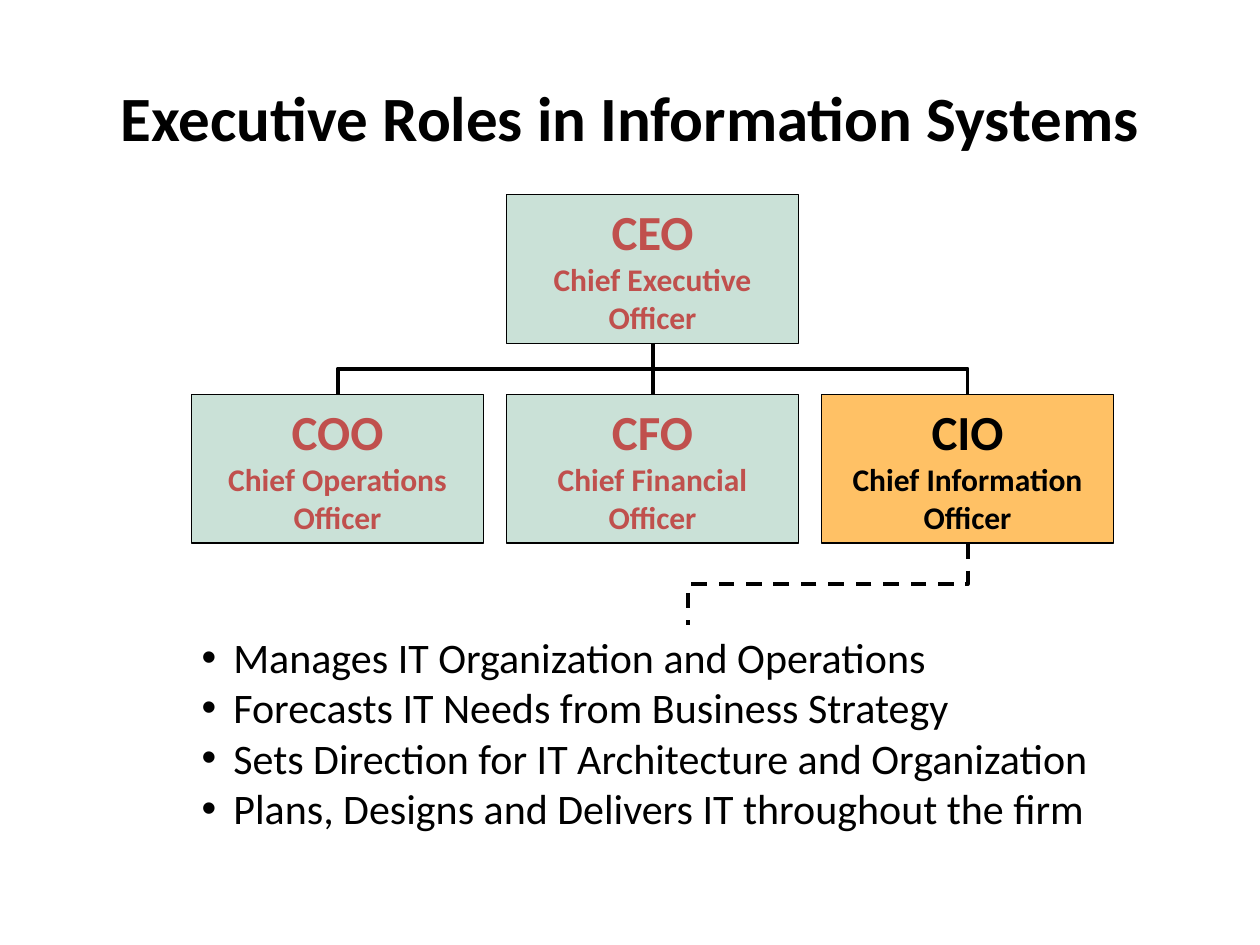
import dataclasses

import pptx
import pptx.dml.color
import pptx.enum.dml
import pptx.enum.shapes
import pptx.enum.text
import pptx.oxml
import pptx.oxml.ns
import pptx.util

Cm = pptx.util.Cm
Pt = pptx.util.Pt
RGB = pptx.dml.color.RGBColor
CONNECTOR = pptx.enum.shapes.MSO_CONNECTOR
ALIGN = pptx.enum.text.PP_ALIGN
ANCHOR = pptx.enum.text.MSO_ANCHOR
AUTO_SIZE = pptx.enum.text.MSO_AUTO_SIZE


@dataclasses.dataclass(frozen=True)
class Theme:
    font: str = "Calibri"
    black: RGB = RGB(0x00, 0x00, 0x00)
    red: RGB = RGB(0xC0, 0x50, 0x4D)
    green: RGB = RGB(0xCA, 0xE1, 0xD7)
    orange: RGB = RGB(0xFF, 0xC1, 0x65)
    title_size: Pt = Pt(36)
    role_size: Pt = Pt(28)
    list_size: Pt = Pt(24)
    name_size: Pt = Pt(18)
    border: Pt = Pt(0.75)
    connector: Pt = Pt(2.25)


THEME = Theme()

REPORTS = [
    ("COO", "Chief Operations"),
    ("CFO", "Chief Financial"),
    ("CIO", "Chief Information"),
]
DUTIES = [
    "Manages IT Organization and Operations",
    "Forecasts IT Needs from Business Strategy",
    "Sets Direction for IT Architecture and Organization",
    "Plans, Designs and Delivers IT throughout the firm",
]


def place(shape, left, top, width, height):
    shape.left, shape.top = int(left), int(top)
    shape.width, shape.height = int(width), int(height)


def add_run(paragraph, text, size, color, bold=False):
    run = paragraph.add_run()
    run.text = text
    run.font.name = THEME.font
    run.font.size = size
    run.font.bold = bold
    run.font.color.rgb = color


def write_paragraphs(text_frame, lines, color, bold, alignment):
    """Write one paragraph for each (text, size) pair."""
    for index, (text, size) in enumerate(lines):
        paragraph = text_frame.add_paragraph() if index else text_frame.paragraphs[0]
        paragraph.alignment = alignment
        paragraph.space_before = Pt(0)
        add_run(paragraph, text, size, color, bold)


def add_title(slide, left, top, width, height):
    title = slide.shapes.title
    place(title, left, top, width, height)
    title.text_frame.vertical_anchor = ANCHOR.MIDDLE
    lines = [("Executive Roles in Information Systems", THEME.title_size)]
    write_paragraphs(title.text_frame, lines, THEME.black, True, ALIGN.CENTER)


def add_role(slide, role, name, left, top, width, height, fill, color):
    box = slide.shapes.add_shape(
        pptx.enum.shapes.MSO_SHAPE.RECTANGLE, left, top, width, height
    )
    box.shadow.inherit = False
    box.fill.solid()
    box.fill.fore_color.rgb = fill
    box.line.color.rgb = THEME.black
    box.line.width = THEME.border
    box.text_frame.word_wrap = False
    box.text_frame.vertical_anchor = ANCHOR.MIDDLE
    lines = [(role, THEME.role_size), (name, THEME.name_size), ("Officer", THEME.name_size)]
    write_paragraphs(box.text_frame, lines, color, True, ALIGN.CENTER)
    return box


def connect_down(slide, upper, lower, dashed=False):
    """Join the bottom of one shape to the top of another, with a bend if they are offset."""
    start_x, start_y = upper.left + upper.width // 2, upper.top + upper.height
    end_x, end_y = lower.left + lower.width // 2, lower.top
    across, down = end_x - start_x, end_y - start_y
    kind = CONNECTOR.ELBOW if across else CONNECTOR.STRAIGHT
    connector = slide.shapes.add_connector(kind, start_x, start_y, end_x, end_y)
    connector.begin_connect(upper, 2)
    connector.end_connect(lower, 0)
    properties = connector._element.spPr
    if across:
        # A quarter turn makes the elbow leave and arrive vertically
        frame = properties.find(pptx.oxml.ns.qn("a:xfrm"))
        frame.attrib.clear()
        frame.set("rot", "5400000" if across < 0 else "16200000")
        if across > 0:
            frame.set("flipH", "1")
        place(
            connector,
            (start_x + end_x - down) / 2,
            (start_y + end_y - abs(across)) / 2,
            down,
            abs(across),
        )
    connector.line.color.rgb = THEME.black
    connector.line.width = THEME.connector
    if dashed:
        connector.line.dash_style = pptx.enum.dml.MSO_LINE.DASH
    properties.append(pptx.oxml.parse_xml(f"<a:effectLst {pptx.oxml.ns.nsdecls('a')}/>"))


def add_organization_chart(slide, left, top, width, height):
    """Draw the chief executive above three reports and return the last report's box."""
    box_width, box_height = Cm(5.89), Cm(3)
    step = (width - box_width) // (len(REPORTS) - 1)
    chief = add_role(
        slide, "CEO", "Chief Executive", left + step, top,
        box_width, box_height, THEME.green, THEME.red,
    )
    report_top = top + height - box_height
    boxes = []
    for index, (role, name) in enumerate(REPORTS):
        highlighted = role == "CIO"
        fill = THEME.orange if highlighted else THEME.green
        color = THEME.black if highlighted else THEME.red
        boxes.append(add_role(
            slide, role, name, left + index * step, report_top,
            box_width, box_height, fill, color,
        ))
    for box in boxes:
        connect_down(slide, chief, box)
    return boxes[-1]


def add_duties(slide, left, top, width, height):
    body = slide.placeholders[1]
    place(body, left, top, width, height)
    body.text_frame.word_wrap = True
    body.text_frame.auto_size = AUTO_SIZE.SHAPE_TO_FIT_TEXT
    lines = [(duty, THEME.list_size) for duty in DUTIES]
    write_paragraphs(body.text_frame, lines, THEME.black, False, ALIGN.LEFT)
    # Bullets with a hanging indent
    for paragraph in body.text_frame.paragraphs:
        properties = paragraph._p.get_or_add_pPr()
        properties.set("marL", str(Cm(0.64)))
        properties.set("indent", str(-Cm(0.64)))
        namespace = pptx.oxml.ns.nsdecls("a")
        properties.append(pptx.oxml.parse_xml(f'<a:buFont {namespace} typeface="Arial"/>'))
        properties.append(pptx.oxml.parse_xml(f'<a:buChar {namespace} char="•"/>'))
    return body


def main():
    presentation = pptx.Presentation()
    presentation.slide_width, presentation.slide_height = Cm(25.4), Cm(19.05)
    slide = presentation.slides.add_slide(presentation.slide_layouts[1])

    add_title(slide, Cm(1.27), Cm(0.76), Cm(22.86), Cm(3.18))
    information_chief = add_organization_chart(slide, Cm(3.86), Cm(3.92), Cm(18.59), Cm(7.03))
    duties = add_duties(slide, Cm(3.81), Cm(12.6), Cm(20.12), Cm(4.32))
    connect_down(slide, information_chief, duties, dashed=True)

    presentation.save("out.pptx")


if __name__ == "__main__":
    main()
